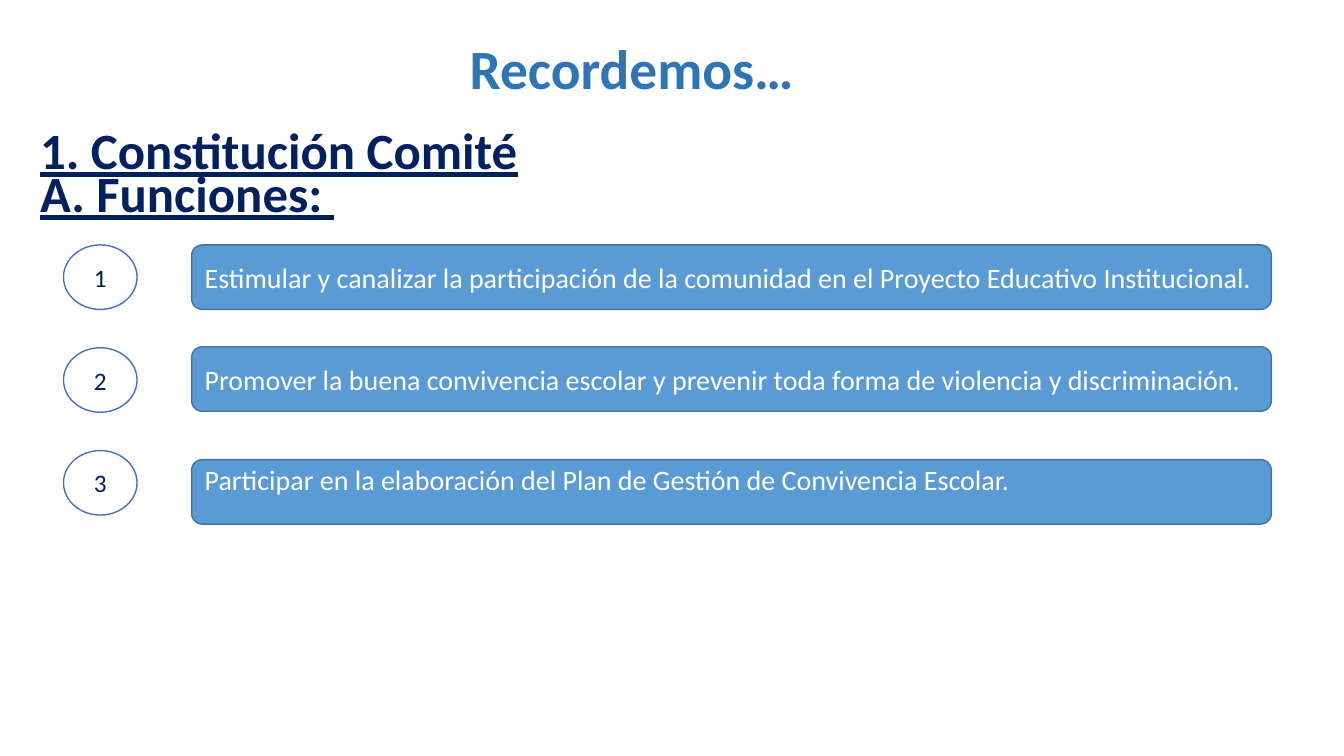
from pptx import Presentation
from pptx import util as u
from pptx.dml.color import RGBColor
from pptx.enum import shapes, text

PX = 9144  # EMU per px, 100 px to the inch
WHITE = RGBColor(0xFF, 0xFF, 0xFF)
NAVY = RGBColor(0x00, 0x20, 0x60)
TITLE_BLUE = RGBColor(0x2E, 0x75, 0xB6)
BAR_BLUE = RGBColor(0x5B, 0x9B, 0xD5)
BAR_EDGE = RGBColor(0x43, 0x73, 0x9E)
CIRCLE_EDGE = RGBColor(0x44, 0x72, 0xC4)

TOP, MIDDLE, BOTTOM = (text.MSO_ANCHOR.TOP, text.MSO_ANCHOR.MIDDLE,
                       text.MSO_ANCHOR.BOTTOM)
LEFT, CENTER = text.PP_ALIGN.LEFT, text.PP_ALIGN.CENTER

ROW_HEIGHT = 64
FUNCTIONS = [  # circle top, bar top, text anchor, wording
    (243, 243, MIDDLE, "Estimular y canalizar la participación de la comunidad "
                       "en el Proyecto Educativo Institucional."),
    (345, 344, MIDDLE, "Promover la buena convivencia escolar y prevenir toda "
                       "forma de violencia y discriminación."),
    (447, 456, TOP, "Participar en la elaboración del Plan de Gestión de "
                    "Convivencia Escolar."),
]


class SlideBuilder:
    font = "Calibri"

    def __init__(self, presentation):
        self.slide = presentation.slides.add_slide(presentation.slide_layouts[6])

    def set_text(self, shape, words, size, color, anchor=MIDDLE, align=LEFT,
                 inset=0, spacing=1.0, bold=False, underline=False):
        """Fill a shape with text; inset is its top and bottom margin in px."""
        frame = shape.text_frame
        frame.word_wrap = True
        frame.vertical_anchor = anchor
        frame.margin_top = frame.margin_bottom = inset * PX
        frame.text = words
        paragraph = frame.paragraphs[0]
        paragraph.alignment = align
        paragraph.line_spacing = spacing
        for run in paragraph.runs:
            run.font.name = self.font
            run.font.size = u.Pt(size)
            run.font.color.rgb = color
            run.font.bold = bold
            run.font.underline = underline

    def text_box(self, box, words, size, color, **style):
        shape = self.slide.shapes.add_textbox(*(n * PX for n in box))
        self.set_text(shape, words, size, color, **style)

    def filled_shape(self, kind, box, fill, edge, words, size, color, **style):
        shape = self.slide.shapes.add_shape(kind, *(n * PX for n in box))
        shape.shadow.inherit = False
        shape.fill.solid()
        shape.fill.fore_color.rgb = fill
        shape.line.color.rgb = edge
        shape.line.width = u.Pt(1)
        self.set_text(shape, words, size, color, **style)


def main():
    presentation = Presentation()
    presentation.slide_width = 1333 * PX
    presentation.slide_height = 750 * PX
    builder = SlideBuilder(presentation)

    builder.text_box((456, -14, 364, 115), "Recordemos…", 39.6, TITLE_BLUE,
                     anchor=BOTTOM, spacing=0.9, bold=True)
    for number, (circle_top, bar_top, anchor, words) in enumerate(FUNCTIONS, 1):
        builder.filled_shape(shapes.MSO_SHAPE.ROUNDED_RECTANGLE,
                             (190, bar_top, 1071, ROW_HEIGHT), BAR_BLUE, BAR_EDGE,
                             words, 20, WHITE, anchor=anchor)
        builder.filled_shape(shapes.MSO_SHAPE.OVAL,
                             (63, circle_top, 73, ROW_HEIGHT), WHITE, CIRCLE_EDGE,
                             str(number), 18, NAVY, align=CENTER)
    builder.text_box((30, 82, 1150, 145), "1. Constitución Comité\vA. Funciones: ",
                     36.3, NAVY, anchor=BOTTOM, inset=8, spacing=0.7,
                     bold=True, underline=True)

    presentation.save("out.pptx")


if __name__ == "__main__":
    main()
